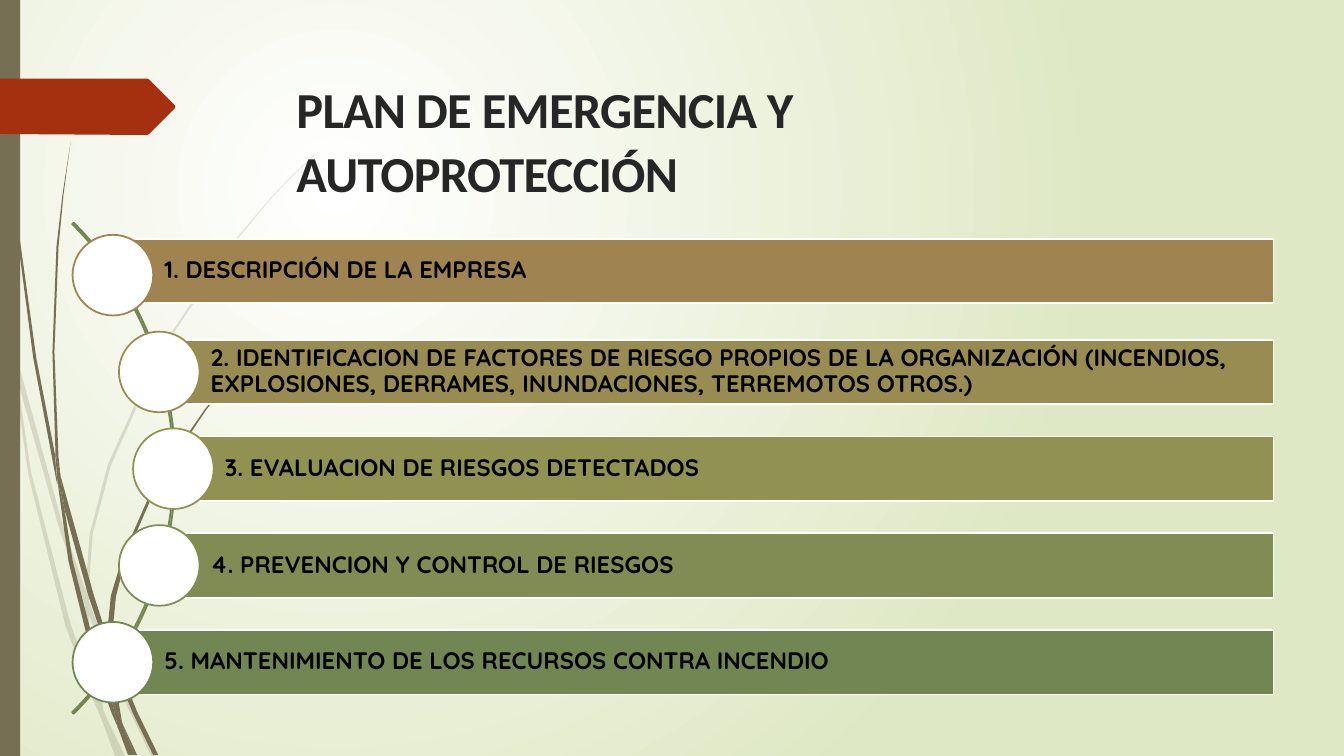
from lxml.etree import SubElement
from pptx import Presentation
from pptx.dml.color import RGBColor
from pptx.enum.shapes import MSO_SHAPE
from pptx.enum.text import MSO_ANCHOR, MSO_AUTO_SIZE, PP_ALIGN
from pptx.oxml import parse_xml
from pptx.oxml.ns import nsdecls, qn
from pptx.util import Emu, Pt

COLUMNS, ROWS = 1333, 750
CELL = 9144  # one grid cell is a hundredth of an inch

COLORS = {
    "paper": "FFFFFF", "meadow": "DFE8C4", "stem": "766F54", "banner": "A53010",
    "title": "262626", "text": "000000", "arc": "728653",
}

TITLE = "PLAN DE EMERGENCIA Y AUTOPROTECCIÓN"
TITLE_FONT = {"name": "Calibri", "size": Pt(36), "bold": True}
TOPIC_FONT = {"name": "Quicksand", "size": Pt(17), "bold": True}

# Text, colour, column of the circle's centre, shift of the bar in rows
TOPICS = [
    ("1. DESCRIPCIÓN DE LA EMPRESA", "9F8351", 112, -4),
    ("2. IDENTIFICACION DE FACTORES DE RIESGO PROPIOS DE LA ORGANIZACIÓN "
     "(INCENDIOS, EXPLOSIONES, DERRAMES, INUNDACIONES, TERREMOTOS OTROS.)", "998C52", 158, 0),
    ("3. EVALUACION DE RIESGOS DETECTADOS", "919252", 172, 0),
    ("4. PREVENCION Y CONTROL DE RIESGOS", "808C53", 158, 0),
    ("5. MANTENIMIENTO DE LOS RECURSOS CONTRA INCENDIO", "728653", 112, 0),
]
FIRST_CENTRE, TOPIC_STEP = 273, 96
BAR_RIGHT, BAR_HEIGHT, CIRCLE = 1263, 64, 80

PALE_WISPS = [
    [(11, 350), (9, 322), (0, 282), (0, 299), (10, 344)],
    [(58, 522), (84, 599), (85, 586), (62, 520), (14, 345), (17, 376)],
    [(92, 607), (88, 596), (88, 610), (123, 694), (150, 750), (155, 750), (127, 692)],
    [(119, 750), (124, 750), (105, 711)],
    [(93, 683), (70, 619), (31, 469), (17, 376), (11, 350), (28, 470), (65, 621),
     (92, 693), (101, 714), (99, 707)],
    [(84, 599), (87, 646), (93, 683), (96, 692), (105, 711), (103, 706), (91, 646),
     (88, 610), (88, 608)],
    [(88, 584), (92, 530), (110, 462), (160, 349), (229, 245), (268, 198), (290, 175),
     (312, 154), (312, 153), (289, 175), (268, 197), (228, 244), (158, 348), (107, 461),
     (89, 530), (85, 584), (85, 586), (88, 596)],
    [(101, 714), (114, 750), (119, 750)],
    [(88, 608), (88, 610), (88, 596), (85, 586), (84, 599)],
    [(96, 692), (93, 683), (99, 707), (101, 714), (119, 750), (105, 711)],
]
DARK_WISPS = [
    [(7, 110), (17, 233), (33, 355), (56, 477), (57, 481), (55, 457), (55, 453), (36, 355),
     (19, 232), (8, 109), (5, 48), (4, 0), (3, 0), (4, 48)],
    [(88, 592), (106, 645), (106, 633), (106, 631), (93, 590), (60, 472), (64, 505)],
    [(113, 649), (110, 641), (111, 656), (132, 708), (152, 749), (157, 749), (136, 706)],
    [(110, 691), (98, 657), (72, 556), (64, 505), (57, 477), (68, 557), (93, 659),
     (111, 708), (117, 722), (116, 717)],
    [(60, 472), (58, 453), (54, 349), (58, 245), (63, 193), (70, 141), (62, 193), (56, 245),
     (52, 349), (55, 449), (60, 472)],
    [(133, 749), (136, 749), (122, 719)],
    [(57, 477), (64, 505), (60, 472), (55, 449), (55, 453)],
    [(111, 633), (115, 592), (125, 552), (158, 476), (205, 406), (231, 374), (245, 359),
     (261, 344), (260, 344), (245, 358), (231, 373), (204, 405), (156, 474), (122, 551),
     (110, 591), (106, 631), (110, 641)],
    [(117, 722), (127, 749), (131, 749)],
    [(106, 645), (110, 691), (116, 706), (122, 719), (121, 716), (111, 656), (109, 651)],
    [(106, 645), (109, 651), (111, 656), (110, 641), (106, 631), (106, 633)],
    [(116, 706), (110, 691), (116, 717), (117, 722), (130, 749), (133, 749), (122, 719)],
]
BANNER = [(0, 78), (146, 78), (148, 79), (173, 104), (174, 106), (173, 108),
          (148, 133), (146, 134), (0, 133)]


def rgb(color):
    return RGBColor.from_string(COLORS.get(color, color))


def apply(target, formats):
    for name, value in formats.items():
        setattr(target, name, value)


class SlideBuilder:
    """Draws on one slide; every length is a count of grid cells."""

    def __init__(self, presentation):
        apply(presentation, {"slide_width": Emu(COLUMNS * CELL), "slide_height": Emu(ROWS * CELL)})
        self.slide = presentation.slides.add_slide(presentation.slide_layouts[5])

    def background(self, inner, outer):
        stops = "".join(
            f'<a:gs pos="{position}"><a:srgbClr val="{COLORS[color]}"/></a:gs>'
            for position, color in ((0, inner), (100000, outer)))
        properties = parse_xml(
            f'<p:bg {nsdecls("p", "a")}><p:bgPr><a:gradFill rotWithShape="1">'
            f'<a:gsLst>{stops}</a:gsLst><a:path path="circle">'
            '<a:fillToRect l="50000" t="50000" r="100000" b="100000"/></a:path>'
            '</a:gradFill><a:effectLst/></p:bgPr></p:bg>')
        self.slide.element.cSld.insert(0, properties)

    def paint(self, shape, fill=None, line=None, alpha=None):
        shape.shadow.inherit = False
        if fill:
            shape.fill.solid()
            shape.fill.fore_color.rgb = rgb(fill)
        else:
            shape.fill.background()
        if line:
            shape.line.color.rgb = rgb(line)
            shape.line.width = Pt(1.25)
        else:
            shape.line.fill.background()
        if alpha:
            color = shape.element.spPr.find(qn("a:solidFill")).find(qn("a:srgbClr"))
            SubElement(color, qn("a:alpha")).set("val", str(alpha * 1000))

    def outline(self, points, fill, alpha=None):
        builder = self.slide.shapes.build_freeform(*points[0], scale=CELL)
        builder.add_line_segments(points[1:], close=True)
        self.paint(builder.convert_to_shape(), fill, alpha=alpha)

    def shape(self, kind, left, top, width, height, fill=None, line=None):
        box = [Emu(round(cells * CELL)) for cells in (left, top, width, height)]
        shape = self.slide.shapes.add_shape(kind, *box)
        self.paint(shape, fill, line)
        return shape

    def label(self, shape, text, font, color, spacing, anchor, insets):
        frame = shape.text_frame
        apply(frame, {"word_wrap": True, "auto_size": MSO_AUTO_SIZE.NONE, "vertical_anchor": anchor})
        apply(frame, {f"margin_{side}": Emu(cells * CELL) for side, cells in insets.items()})
        paragraph = frame.paragraphs[0]
        apply(paragraph, {"alignment": PP_ALIGN.LEFT, "line_spacing": spacing})
        run = paragraph.add_run()
        run.text = text
        apply(run.font, font)
        run.font.color.rgb = rgb(color)
        return run

    def title(self, text, left, top, width, height):
        placeholder = self.slide.shapes.title
        sides = {"left": left, "top": top, "width": width, "height": height}
        apply(placeholder, {side: Emu(cells * CELL) for side, cells in sides.items()})
        run = self.label(placeholder, text, TITLE_FONT, "title", 1.07, MSO_ANCHOR.TOP,
                         {"left": 10, "top": 5, "right": 10, "bottom": 5})
        run.font._element.set("spc", "-50")
        placeholder.text_frame.paragraphs[0].space_after = Pt(8)

    def topic(self, text, color, column, centre, shift):
        """Draws a bar that starts at the centre of its circle."""
        bar = self.shape(MSO_SHAPE.RECTANGLE, column, centre - BAR_HEIGHT / 2 + shift,
                         BAR_RIGHT - column, BAR_HEIGHT, color, "paper")
        self.label(bar, text, TOPIC_FONT, "text", 0.9, MSO_ANCHOR.MIDDLE,
                   {"left": 51, "top": 5, "right": 5, "bottom": 5})
        self.shape(MSO_SHAPE.OVAL, column - CIRCLE / 2, centre - CIRCLE / 2,
                   CIRCLE, CIRCLE, "paper", color)


def main():
    presentation = Presentation()
    builder = SlideBuilder(presentation)
    builder.background("paper", "meadow")
    for wisps, alpha in ((PALE_WISPS, 20), (DARK_WISPS, None)):
        for points in wisps:
            builder.outline(points, "stem", alpha)
    builder.shape(MSO_SHAPE.RECTANGLE, 0, 0, 20, ROWS, "stem")
    builder.outline(BANNER, "banner")
    builder.title(TITLE, 284, 68, 869, 75)
    arc = builder.shape(MSO_SHAPE.BLOCK_ARC, -515, 120, 689, 689, line="arc")
    for index, value in enumerate((189, 27, 0.003)):
        arc.adjustments[index] = value
    for index, (text, color, column, shift) in enumerate(TOPICS):
        builder.topic(text, color, column, FIRST_CENTRE + index * TOPIC_STEP, shift)
    presentation.save("out.pptx")


if __name__ == "__main__":
    main()
